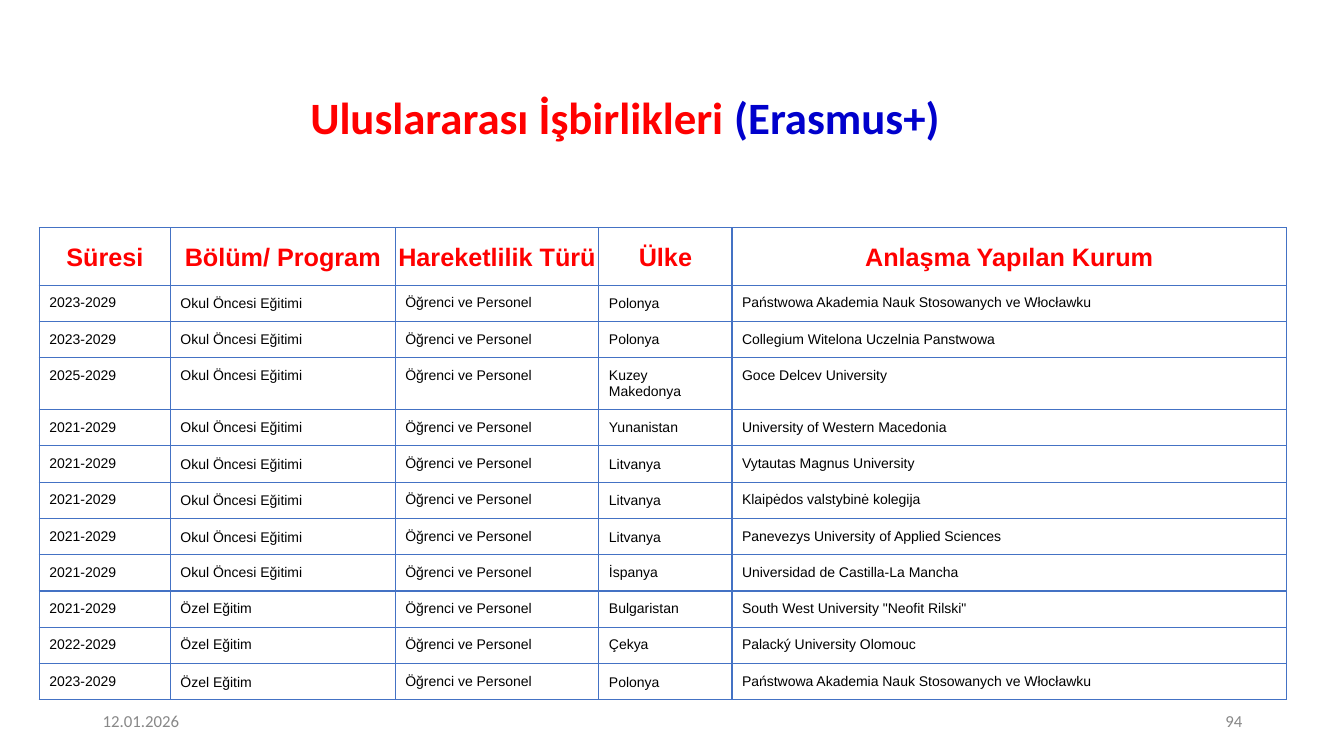
from dataclasses import dataclass

from lxml.etree import SubElement
from pptx import Presentation
from pptx.dml.color import RGBColor
from pptx.enum.text import MSO_ANCHOR as Anchor, PP_ALIGN as Align
from pptx.oxml.ns import qn
from pptx.util import Inches, Pt


@dataclass(frozen=True)
class Theme:
    """Fonts, colours and type sizes of the slide."""
    heading_font: str = "Calibri"
    table_font: str = "Arial"
    red: str = "FF0000"
    blue: str = "0000CC"
    grey: str = "888888"
    black: str = "000000"
    border: str = "4472C4"
    title_size: int = 32
    header_size: int = 18
    body_size: int = 10
    footer_size: int = 12
    loose: float = 1.07


THEME = Theme()
HEADERS = ("Süresi", "Bölüm/ Program", "Hareketlilik Türü", "Ülke", "Anlaşma Yapılan Kurum")
COLUMN_WIDTHS = (1.3, 2.23, 2.02, 1.32, 5.5)
HEADER_HEIGHT, ROW_HEIGHT, TALL_ROW_HEIGHT = 0.57, 0.36, 0.51
TALL_ROW = 3
SIDE_INSET, BOTTOM_INSET = 0.1, 0.08
MOBILITY = "Öğrenci ve Personel"
PRESCHOOL, SPECIAL = "Okul Öncesi Eğitimi", "Özel Eğitim"
AGREEMENTS = (
    ("2023-2029", PRESCHOOL, "Polonya", "Państwowa Akademia Nauk Stosowanych ve Włocławku"),
    ("2023-2029", PRESCHOOL, "Polonya", "Collegium Witelona Uczelnia Panstwowa"),
    ("2025-2029", PRESCHOOL, "Kuzey Makedonya", "Goce Delcev University"),
    ("2021-2029", PRESCHOOL, "Yunanistan", "University of Western Macedonia"),
    ("2021-2029", PRESCHOOL, "Litvanya", "Vytautas Magnus University"),
    ("2021-2029", PRESCHOOL, "Litvanya", "Klaipėdos valstybinė kolegija"),
    ("2021-2029", PRESCHOOL, "Litvanya", "Panevezys University of Applied Sciences"),
    ("2021-2029", PRESCHOOL, "İspanya", "Universidad de Castilla-La Mancha"),
    ("2021-2029", SPECIAL, "Bulgaristan", "South West University \"Neofit Rilski\""),
    ("2022-2029", SPECIAL, "Çekya", "Palacký University Olomouc"),
    ("2023-2029", SPECIAL, "Polonya", "Państwowa Akademia Nauk Stosowanych ve Włocławku"),
)
LOOSE_ROWS = {1, 5, 6, 7, 11}
LOOSE_COLUMNS = {1, 3}


def add_run(p, text, font, size, color, bold=False):
    """Append a styled run to a paragraph."""
    r = p.add_run()
    r.text = text
    r.font.name = font
    r.font.size = Pt(size)
    r.font.bold = bold
    r.font.color.rgb = RGBColor.from_string(color)


def add_text(slide, left, top, width, height, align):
    """Add a middle-anchored text box and return its paragraph."""
    sp = slide.shapes.add_textbox(Inches(left), Inches(top), Inches(width), Inches(height))
    tf = sp.text_frame
    tf.word_wrap = True
    tf.vertical_anchor = Anchor.MIDDLE
    p = tf.paragraphs[0]
    p.alignment = align
    return p


def set_borders(cell):
    """Draw a thin line on every side of a cell."""
    tc_pr = cell._tc.get_or_add_tcPr()
    for index, side in enumerate(("lnL", "lnR", "lnT", "lnB")):
        line = SubElement(tc_pr, qn(f"a:{side}"), w=str(Pt(1)))
        fill = SubElement(line, qn("a:solidFill"))
        SubElement(fill, qn("a:srgbClr"), val=THEME.border)
        tc_pr.insert(index, line)


def fill_cell(cell, text, is_header, is_loose):
    """Write and style one table cell."""
    cell.fill.background()
    set_borders(cell)
    cell.margin_left = cell.margin_right = cell.margin_top = Inches(0 if is_header else SIDE_INSET)
    cell.margin_bottom = Inches(0 if is_header else BOTTOM_INSET)
    cell.vertical_anchor = Anchor.MIDDLE if is_header else Anchor.TOP
    p = cell.text_frame.paragraphs[0]
    p.alignment = Align.CENTER if is_header else Align.LEFT
    if is_loose:
        p.line_spacing = THEME.loose
    size = THEME.header_size if is_header else THEME.body_size
    color = THEME.red if is_header else THEME.black
    add_run(p, text, THEME.table_font, size, color, is_header)


def add_agreements(slide, left, top):
    """Add the table of exchange agreements."""
    rows = [HEADERS] + [(years, programme, MOBILITY, country, school)
                        for years, programme, country, school in AGREEMENTS]
    heights = [HEADER_HEIGHT] + [ROW_HEIGHT] * len(AGREEMENTS)
    heights[TALL_ROW] = TALL_ROW_HEIGHT
    table = slide.shapes.add_table(
        len(rows), len(HEADERS), Inches(left), Inches(top),
        Inches(sum(COLUMN_WIDTHS)), Inches(sum(heights))).table
    table.first_row = table.horz_banding = False
    for column, width in zip(table.columns, COLUMN_WIDTHS):
        column.width = Inches(width)
    for i, (height, values) in enumerate(zip(heights, rows)):
        table.rows[i].height = Inches(height)
        for j, text in enumerate(values):
            is_loose = i == 0 or (i in LOOSE_ROWS and j in LOOSE_COLUMNS)
            fill_cell(table.cell(i, j), text, i == 0, is_loose)


def add_title(slide):
    """Add the two-colour title."""
    p = add_text(slide, 0.43, 0.94, 11.54, 0.5, Align.CENTER)
    p.line_spacing = 0.9
    for text, color in (("Uluslararası İşbirlikleri ", THEME.red), ("(Erasmus+)", THEME.blue)):
        add_run(p, text, THEME.heading_font, THEME.title_size, color, True)


def add_footer(slide, left, text, align):
    """Add one grey footer text."""
    p = add_text(slide, left, 6.95, 3, 0.4, align)
    add_run(p, text, THEME.heading_font, THEME.footer_size, THEME.grey)


def main():
    """Build and save the slide."""
    prs = Presentation()
    prs.slide_width, prs.slide_height = Inches(13.33), Inches(7.5)
    slide = prs.slides.add_slide(prs.slide_layouts[6])
    add_title(slide)
    add_footer(slide, 0.92, "12.01.2026", Align.LEFT)
    add_footer(slide, 9.42, "94", Align.RIGHT)
    add_agreements(slide, 0.39, 2.26)
    prs.save("out.pptx")


if __name__ == "__main__":
    main()
